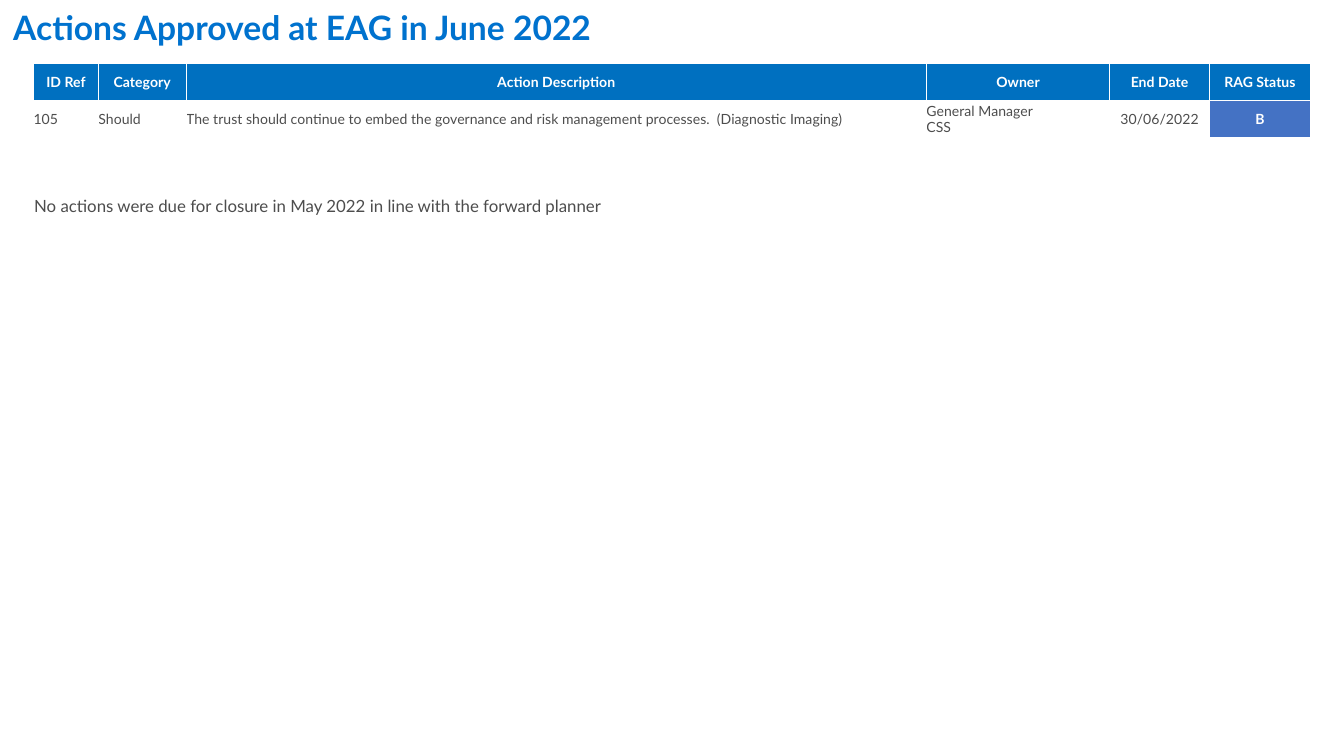
from lxml.etree import SubElement
from pptx import Presentation
from pptx.dml.color import RGBColor
from pptx.enum.text import MSO_ANCHOR, PP_ALIGN
from pptx.oxml.ns import qn
from pptx.util import Pt

COLORS = {
    "title": "0072CE",
    "header": "0070C0",
    "status": "4472C4",
    "body": "4D4D4D",
    "white": "FFFFFF",
}
FONT = "Lato"
COLUMN_WIDTHS = [34.7, 47, 396.6, 98.2, 53.5, 54]
HEADINGS = ["ID Ref", "Category", "Action Description", "Owner", "End Date", "RAG Status"]
ACTIONS = [
    [
        "105",
        "Should",
        "The trust should continue to embed the governance and risk management processes.  (Diagnostic Imaging)",
        "General Manager\nCSS",
        "30/06/2022",
        "B",
    ],
]
CENTERED_COLUMNS = {"End Date", "RAG Status"}


def write_text(paragraph, text, size, color, bold=False):
    for index, line in enumerate(text.split("\n")):
        if index:
            paragraph.add_line_break()
        run = paragraph.add_run()
        run.text = line
        run.font.name = FONT
        run.font.size = Pt(size)
        run.font.bold = bold
        run.font.color.rgb = RGBColor.from_string(COLORS[color])


def add_text(slide, box, text, size, color, bold=False):
    shape = slide.shapes.add_textbox(*map(Pt, box))
    shape.text_frame.word_wrap = True
    write_text(shape.text_frame.paragraphs[0], text, size, color, bold)


def add_borders(cell):
    properties = cell._tc.get_or_add_tcPr()
    for index, side in enumerate(("a:lnL", "a:lnR", "a:lnT", "a:lnB")):
        line = properties.makeelement(qn(side), {"w": str(Pt(0.5))})
        fill = SubElement(line, qn("a:solidFill"))
        SubElement(fill, qn("a:srgbClr"), val=COLORS["white"])
        properties.insert(index, line)


def fill_cell(cell, text, color, fill=None, bold=False, centered=False):
    cell.margin_left = cell.margin_right = cell.margin_top = cell.margin_bottom = Pt(0)
    cell.vertical_anchor = MSO_ANCHOR.MIDDLE
    if fill:
        cell.fill.solid()
        cell.fill.fore_color.rgb = RGBColor.from_string(COLORS[fill])
    else:
        cell.fill.background()
    add_borders(cell)
    paragraph = cell.text_frame.paragraphs[0]
    paragraph.alignment = PP_ALIGN.CENTER if centered else PP_ALIGN.LEFT
    write_text(paragraph, text, 7.5, color, bold)


def add_action_table(slide, box):
    row_count = len(ACTIONS) + 1
    table = slide.shapes.add_table(row_count, len(HEADINGS), *map(Pt, box)).table
    for column, width in zip(table.columns, COLUMN_WIDTHS):
        column.width = Pt(width)
    for row in table.rows:
        row.height = Pt(box[3] / row_count)
    for column, heading in enumerate(HEADINGS):
        fill_cell(table.cell(0, column), heading, "white", "header", True, True)
        for row, action in enumerate(ACTIONS, 1):
            is_status = heading == "RAG Status"
            fill_cell(
                table.cell(row, column),
                action[column],
                "white" if is_status else "body",
                "status" if is_status else None,
                is_status,
                heading in CENTERED_COLUMNS,
            )


def main():
    presentation = Presentation()
    presentation.slide_width = Pt(720)
    presentation.slide_height = Pt(405)
    slide = presentation.slides.add_slide(presentation.slide_layouts[6])
    add_text(slide, (0, 0, 702, 36), "Actions Approved at EAG in June 2022", 18, "title", True)
    add_action_table(slide, (18, 33.8, 684, 40))
    add_text(
        slide,
        (11.2, 101.5, 342, 18),
        "No actions were due for closure in May 2022 in line with the forward planner",
        9,
        "body",
    )
    presentation.save("out.pptx")


if __name__ == "__main__":
    main()
